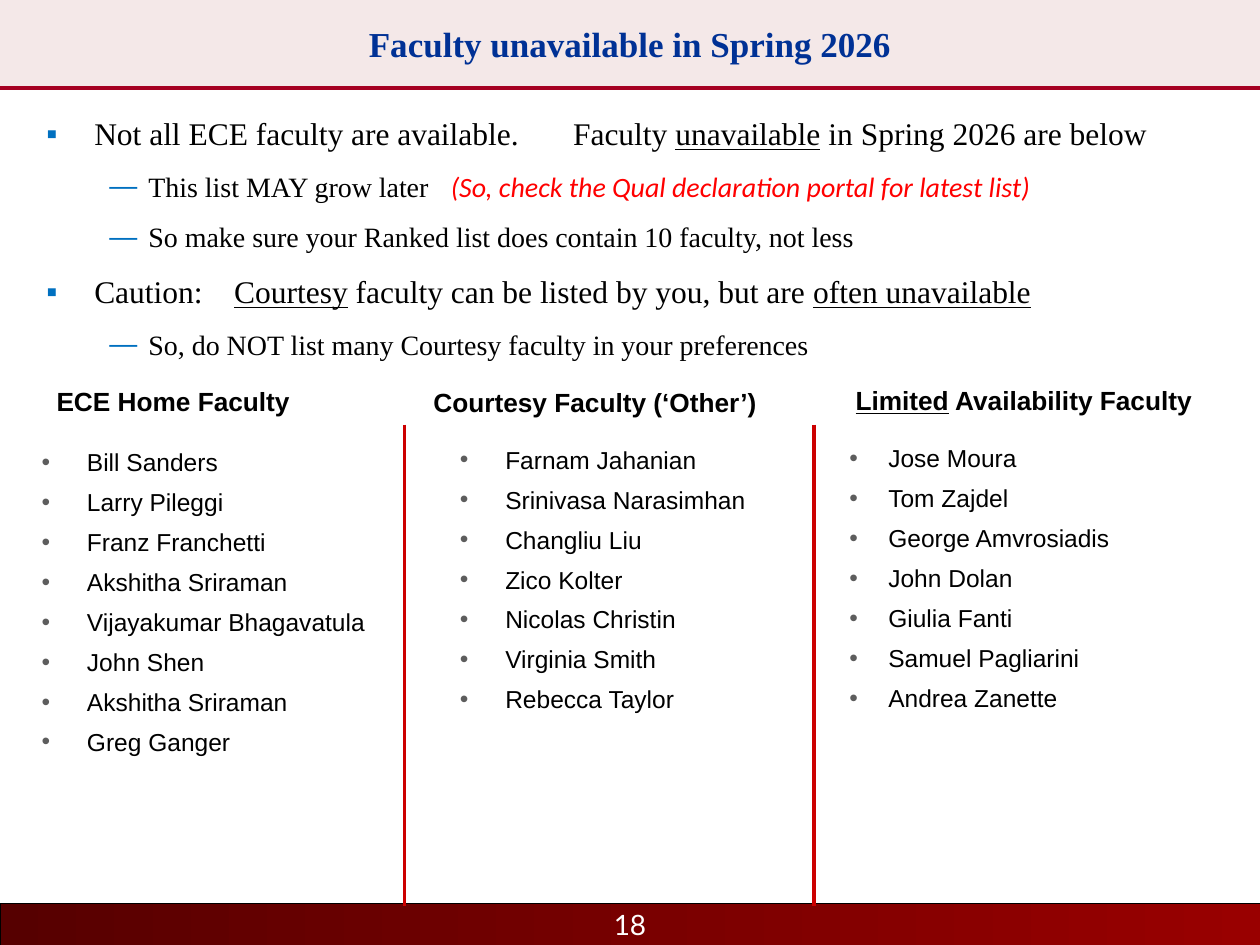
"""Build the slide listing faculty who are unavailable in Spring 2026."""
from dataclasses import dataclass

from lxml import etree
from pptx import Presentation
from pptx.dml.color import RGBColor as Rgb
from pptx.enum.shapes import MSO_CONNECTOR as Connector, MSO_SHAPE as Shape
from pptx.enum.text import MSO_ANCHOR as Anchor, MSO_AUTO_SIZE as AutoSize, PP_ALIGN as Align
from pptx.oxml.ns import qn
from pptx.util import Inches, Pt


@dataclass(frozen=True)
class Theme:
    serif: str = "Times New Roman"
    sans: str = "Arial"
    accent_font: str = "Calibri"
    number_font: str = "Lato"
    black: str = "000000"
    white: str = "FFFFFF"
    title: str = "003195"
    title_band: str = "900000"
    title_rule: str = "A50021"
    footer_start: str = "560000"
    footer_end: str = "990000"
    divider: str = "CC0000"
    warning: str = "FF0000"
    note_bullet: str = "0070C0"
    name_bullet: str = "5D5D5D"
    title_size: int = 20
    point_size: int = 18
    detail_size: int = 16
    heading_size: int = 15
    name_size: int = 14


theme = Theme()


def style_runs(paragraph, font_name, size, color, bold=False):
    for run in paragraph.runs:
        run.font.name = font_name
        run.font.size = Pt(size)
        run.font.bold = bold
        run.font.color.rgb = Rgb.from_string(color)


def add_bullet(paragraph, char, color, margin, hang, tab=None):
    props = paragraph._p.get_or_add_pPr()
    props.set("marL", str(Inches(margin)))
    props.set("indent", str(-Inches(hang)))
    bullet_color = etree.SubElement(props, qn("a:buClr"))
    etree.SubElement(bullet_color, qn("a:srgbClr"), val=color)
    etree.SubElement(props, qn("a:buFont"), typeface=theme.sans)
    etree.SubElement(props, qn("a:buChar"), char=char)
    if tab:
        tabs = etree.SubElement(props, qn("a:tabLst"))
        etree.SubElement(tabs, qn("a:tab"), pos=str(Inches(tab)), algn="l")


prs = Presentation()
prs.slide_width, prs.slide_height = Inches(10), Inches(7.5)
slide = prs.slides.add_slide(prs.slide_layouts[5])
shapes = slide.shapes

title = shapes.title
title.left, title.top, title.width, title.height = Inches(0), Inches(0), Inches(10), Inches(0.69)
title.fill.solid()
title.fill.fore_color.rgb = Rgb.from_string(theme.title_band)
band_color = title._element.spPr.find(qn("a:solidFill"))[0]
etree.SubElement(band_color, qn("a:alpha"), val="9000")
title.text_frame.text = "Faculty unavailable in Spring 2026"
title.text_frame.auto_size = AutoSize.NONE
title.text_frame.vertical_anchor = Anchor.MIDDLE
title.text_frame.paragraphs[0].alignment = Align.CENTER
style_runs(title.text_frame.paragraphs[0], theme.serif, theme.title_size, theme.title, True)

footer = shapes.add_shape(Shape.RECTANGLE, Inches(0), Inches(7.17), Inches(10), Inches(0.33))
footer.shadow.inherit = False
footer.fill.gradient()
footer.fill.gradient_angle = 0
for stop, color in zip(footer.fill.gradient_stops, (theme.footer_start, theme.footer_end)):
    stop.color.rgb = Rgb.from_string(color)
for stop, position in zip(footer.fill.gradient_stops, (0, 1)):
    stop.position = position
footer.line.color.rgb = Rgb.from_string(theme.black)
footer.line.width = Pt(0.25)

page_number = shapes.add_textbox(Inches(0), Inches(7.15), Inches(10), Inches(0.37)).text_frame
page_number.word_wrap = True
page_number.text = "18"
page_number.paragraphs[0].alignment = Align.CENTER
style_runs(page_number.paragraphs[0], theme.number_font, theme.detail_size, theme.white)

rules = [
    (0, 0.7, 10, 0.7, theme.title_rule, 2.25),
    (3.21, 3.37, 3.21, 7.19, theme.divider, 2),
    (6.46, 3.37, 6.46, 7.19, theme.divider, 2),
]
for x1, y1, x2, y2, color, width in rules:
    rule = shapes.add_connector(Connector.STRAIGHT, Inches(x1), Inches(y1), Inches(x2), Inches(y2))
    rule.line.color.rgb = Rgb.from_string(color)
    rule.line.width = Pt(width)
    etree.SubElement(rule._element.spPr, qn("a:effectLst"))

notes = [
    (0, 4.18, [("Not all ECE faculty are available.\tFaculty ", ""), ("unavailable", "underline"),
               (" in Spring 2026 are below", "")]),
    (1, 3.21, [("This list MAY grow later\t", ""),
               ("(So, check the Qual declaration portal for latest list)", "warning")]),
    (1, None, [("So make sure your Ranked list does contain 10 faculty, not less", "")]),
    (0, 1.49, [("Caution:\t", ""), ("Courtesy", "underline"),
               (" faculty can be listed by you, but are ", ""), ("often unavailable", "underline")]),
    (1, None, [("So, do NOT list many Courtesy faculty in your preferences", "")]),
]
advice = shapes.add_textbox(Inches(0.27), Inches(0.71), Inches(9.33), Inches(2.3)).text_frame
advice.word_wrap = True
for index, (level, tab, pieces) in enumerate(notes):
    note = advice.add_paragraph() if index else advice.paragraphs[0]
    note.level = level
    note.line_spacing = 1.3 if level else 1.5
    note.space_before = Pt(4 if level else 0)
    if level:
        add_bullet(note, "―", theme.note_bullet, 0.81, 0.31, tab)
    else:
        add_bullet(note, "▪", theme.note_bullet, 0.38, 0.38, tab)
    for text, _ in pieces:
        note.add_run().text = text
    style_runs(note, theme.serif, theme.detail_size if level else theme.point_size, theme.black)
    for run, (_, style) in zip(note.runs, pieces):
        run.font.underline = style == "underline"
        if style == "warning":
            run.font.name = theme.accent_font
            run.font.italic = True
            run.font.color.rgb = Rgb.from_string(theme.warning)

headings = [
    (0.34, 3.01, 2.28, 0.35, 0.1, 0.05, Align.LEFT, ["ECE Home Faculty"]),
    (3.43, 3.06, 3.45, 0.27, 0, 0.01, Align.LEFT, ["Courtesy Faculty (‘Other’)"]),
    (6.41, 3, 3.42, 0.35, 0.1, 0.05, Align.CENTER, ["Limited", " Availability Faculty"]),
]
for left, top, width, height, side, inset, alignment, pieces in headings:
    frame = shapes.add_textbox(Inches(left), Inches(top), Inches(width), Inches(height)).text_frame
    frame.word_wrap = True
    frame.margin_left = frame.margin_right = Inches(side)
    frame.margin_top = Inches(inset)
    frame.margin_bottom = Inches(inset if side else 0)
    heading = frame.paragraphs[0]
    heading.alignment = alignment
    heading._p.get_or_add_pPr().set("marL", str(Inches(0.01)))
    for text in pieces:
        heading.add_run().text = text
    style_runs(heading, theme.sans, theme.heading_size, theme.black, True)
    heading.runs[0].font.underline = len(pieces) > 1

rosters = [
    (0.3, 3.36, 2.68, 3.46, 0.19, 0.39, 0.36,
     ["Bill Sanders", "Larry Pileggi", "Franz Franchetti", "Akshitha Sriraman",
      "Vijayakumar Bhagavatula", "John Shen", "Akshitha Sriraman", "Greg Ganger"]),
    (3.62, 3.43, 2.68, 3.57, 0.1, 0.39, 0.36,
     ["Farnam Jahanian", "Srinivasa Narasimhan", "Changliu Liu", "Zico Kolter",
      "Nicolas Christin", "Virginia Smith", "Rebecca Taylor"]),
    (6.71, 3.33, 2.65, 3.03, 0.19, 0.34, 0.31,
     ["Jose Moura", "Tom Zajdel", "George Amvrosiadis", "John Dolan",
      "Giulia Fanti", "Samuel Pagliarini", "Andrea Zanette"]),
]
for left, top, width, height, inset, margin, hang, names in rosters:
    roster = shapes.add_textbox(Inches(left), Inches(top), Inches(width), Inches(height)).text_frame
    roster.word_wrap = True
    roster.margin_left = roster.margin_right = roster.margin_bottom = 0
    roster.margin_top = Inches(inset)
    roster.text = "\n".join(names)
    for member in roster.paragraphs:
        member.space_after = Pt(6)
        add_bullet(member, "•", theme.name_bullet, margin, hang)
        style_runs(member, theme.sans, theme.name_size, theme.black)

prs.save("out.pptx")
